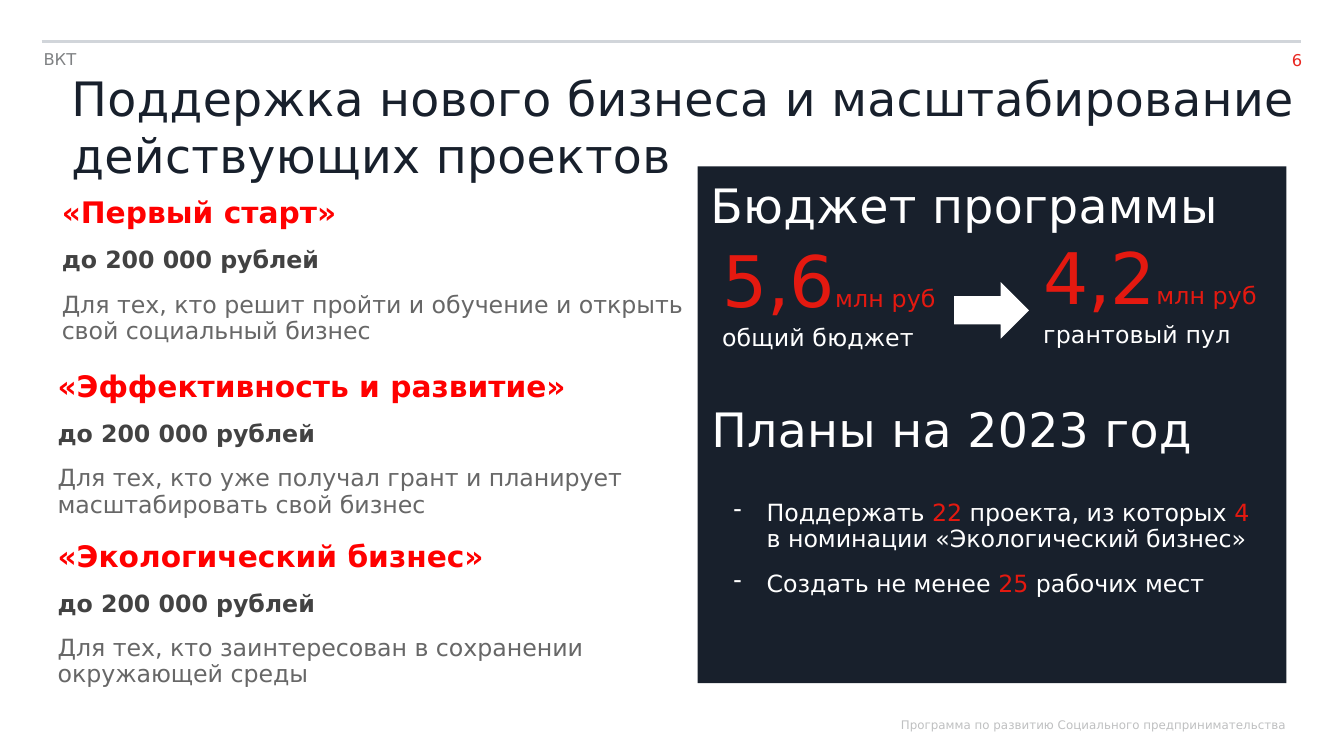
"""Build the slide on support for new business and the programme budget."""
from lxml.etree import SubElement
from pptx import Presentation
from pptx.dml.color import RGBColor
from pptx.enum.shapes import MSO_CONNECTOR as Connector, MSO_SHAPE as Shape
from pptx.enum.text import MSO_ANCHOR as Anchor, MSO_AUTO_SIZE as AutoSize, PP_ALIGN as Align
from pptx.oxml.ns import qn
from pptx.util import Inches, Pt

FONT = "DejaVu Sans"
NAVY, WHITE, RED, BRIGHT_RED = "18202C", "FFFFFF", "E41910", "FF0000"
PAGE_RED, DARK, GRAY, ORG_GRAY, PALE, RULE = "E92721", "424242", "676767", "7F8183", "BFC0C1", "D1D5DA"

TITLE = "Поддержка нового бизнеса и масштабирование действующих проектов"
ORGANISATION, PAGE = "ВКТ", "6"
FOOTER = "Программа по развитию Социального предпринимательства"
GRANT = "до 200 000 рублей"
PROGRAMS = [
    ("«Первый старт»", "Для тех, кто решит пройти и обучение и открыть свой социальный бизнес", 4.6, 23.41),
    ("«Эффективность и развитие»", "Для тех, кто уже получал грант и планирует масштабировать свой бизнес", 4.29, 46.4),
    ("«Экологический бизнес»", "Для тех, кто заинтересован в сохранении окружающей среды", 4.29, 68.83),
]
HEADINGS = [
    ("Бюджет программы", (50, 19.18, 43.49, 15.8)),
    ("Планы на 2023 год", (51.11, 48.8, 39.44, 15.8)),
]
UNIT = "млн руб"
BUDGETS = [("5,6", "общий бюджет", 53.73, 38.36), ("4,2", "грантовый пул", 77.62, 37.94)]
PLANS = [
    [("Поддержать ", WHITE), ("22", RED), (" проекта, из которых ", WHITE), ("4", RED),
     (" в номинации «Экологический бизнес»", WHITE)],
    [("Создать не менее ", WHITE), ("25", RED), (" рабочих мест", WHITE)],
]

prs = Presentation()
prs.slide_width, prs.slide_height = Inches(12.6), Inches(7.09)
slide = prs.slides.add_slide(prs.slide_layouts[5])
shapes = slide.shapes


def color(code):
    """Return the colour for a hex string."""
    return RGBColor.from_string(code)


def place(left, top, width, height):
    """Turn percentages of the slide into lengths."""
    sides = (prs.slide_width, prs.slide_height) * 2
    return [int(side * share / 100) for side, share in zip(sides, (left, top, width, height))]


def run(text, size, code, bold=False, tracking=0):
    """Describe one run of text."""
    return text, {"size": Pt(size), "bold": bold, "name": FONT}, code, tracking


def para(*runs, **layout):
    """Describe one paragraph with its layout values."""
    return runs, layout


def fill_text(shape, paragraphs, **frame_format):
    """Write paragraphs into the shape's text frame."""
    frame = shape.text_frame
    defaults = {"word_wrap": True, "auto_size": AutoSize.NONE, "vertical_anchor": Anchor.TOP}
    for key, value in (defaults | frame_format).items():
        setattr(frame, key, value)
    for index, (runs, layout) in enumerate(paragraphs):
        paragraph = frame.add_paragraph() if index else frame.paragraphs[0]
        for key, value in layout.items():
            setattr(paragraph, key, value)
        for text, font_format, code, tracking in runs:
            part = paragraph.add_run()
            part.text = text
            for key, value in font_format.items():
                setattr(part.font, key, value)
            part.font.color.rgb = color(code)
            if tracking:
                part._r.get_or_add_rPr().set("spc", str(tracking))
    return frame


def add_text(box, paragraphs, **frame_format):
    """Add a text box placed by shares of the slide."""
    return fill_text(shapes.add_textbox(*place(*box)), paragraphs, **frame_format)


def add_solid(kind, box, code):
    """Add a plain filled shape."""
    solid = shapes.add_shape(kind, *place(*box))
    solid.shadow.inherit = False
    solid.fill.solid()
    solid.fill.fore_color.rgb = color(code)
    solid.line.fill.background()


def margins(top):
    """Return frame margins with only the top one open."""
    return {"margin_left": 0, "margin_right": 0, "margin_bottom": 0, "margin_top": Inches(top)}


def main():
    """Lay out the slide and save it."""
    left, top, width, _ = place(3.1, 5.5, 93.73, 0)
    rule = shapes.add_connector(Connector.STRAIGHT, left, top, left + width, top)
    rule.line.color.rgb, rule.line.width = color(RULE), Pt(1.5)
    SubElement(rule._element.spPr, qn("a:effectLst"))

    title = shapes.title
    title.left, title.top, title.width, title.height = place(4.52, 8.46, 93.02, 16.36)
    fill_text(title, [para(run(TITLE, 32, NAVY, tracking=20), alignment=Align.LEFT)],
              vertical_anchor=Anchor.MIDDLE)
    add_text((91.11, 5.78, 5.79, 4.23), [para(run(PAGE, 11, PAGE_RED), alignment=Align.RIGHT)],
             vertical_anchor=Anchor.MIDDLE, **margins(0))
    add_text((2.46, 5.78, 21.27, 4.23), [para(run(ORGANISATION, 11, ORG_GRAY))])
    add_text((60.71, 94.22, 35.79, 3.24), [para(run(FOOTER, 8, PALE), alignment=Align.RIGHT)])

    body = {"line_spacing": Pt(17.8), "space_before": Pt(12)}
    for name, audience, left, top in PROGRAMS:
        add_text((left, top, 47, 28.35), [
            para(run(name, 20, BRIGHT_RED, True)),
            para(run(GRANT, 16, DARK, True), **body),
            para(run(audience, 16, GRAY), **body),
        ], **margins(0.16))

    add_solid(Shape.RECTANGLE, (51.9, 22, 43.81, 68.36), NAVY)
    for heading, box in HEADINGS:
        add_text(box, [para(run(heading, 32, WHITE, tracking=20), alignment=Align.CENTER)],
                 vertical_anchor=Anchor.MIDDLE)
    for amount, meaning, left, top in BUDGETS:
        add_text((left, top, 18.1, 8.18), [
            para(run(amount, 48, RED), run(UNIT, 16, RED, tracking=10), line_spacing=Pt(20)),
            para(run(meaning, 16, WHITE, tracking=10), line_spacing=Pt(20)),
        ], **margins(0.02))
    add_solid(Shape.RIGHT_ARROW, (71, 37.31, 5.56, 7.48), WHITE)

    plans = add_text((53.65, 65.44, 40.87, 14.67),
                     [para(*(run(text, 16, code) for text, code in plan), **body) for plan in PLANS])
    for plan in plans.paragraphs:
        properties = plan._p.get_or_add_pPr()
        properties.set("marL", str(Inches(0.33)))
        properties.set("indent", str(Inches(-0.31)))
        SubElement(properties, qn("a:buChar")).set("char", "-")

    prs.save("out.pptx")


if __name__ == "__main__":
    main()
